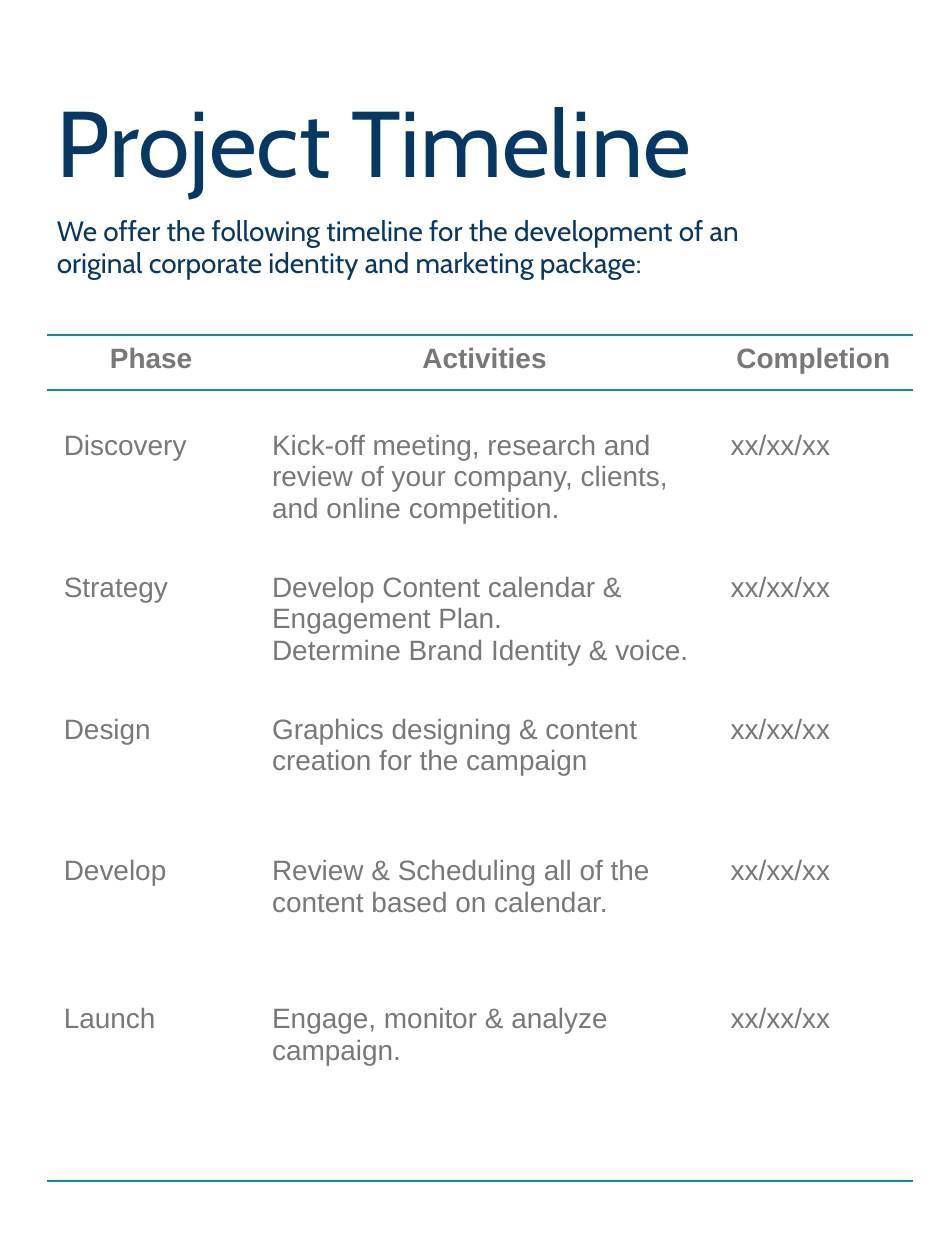
from lxml import etree
from pptx import Presentation
from pptx.dml.color import RGBColor
from pptx.enum.text import MSO_ANCHOR, MSO_AUTO_SIZE, PP_ALIGN
from pptx.oxml.ns import qn
from pptx.util import Pt

LEFT, CENTER = PP_ALIGN.LEFT, PP_ALIGN.CENTER
TOP = MSO_ANCHOR.TOP
NO_AUTOFIT = MSO_AUTO_SIZE.NONE
TITLE_ONLY_LAYOUT = 5
PLAIN_TABLE_STYLE = "{2D5ABB26-0587-4C30-8999-92F81FD0307C}"

# Content
TITLE = "Project Timeline"
INTRODUCTION = ("We offer the following timeline for the development of an "
                "original corporate identity and marketing package:")
HEADERS = ("Phase", "Activities", "Completion")
PHASES = [
    ("Discovery", "Kick-off meeting, research and review of your company, "
                  "clients, and online competition.", "xx/xx/xx"),
    ("Strategy", "Develop Content calendar & Engagement Plan.\n"
                 "Determine Brand Identity & voice.", "xx/xx/xx"),
    ("Design", "Graphics designing & content creation for the campaign", "xx/xx/xx"),
    ("Develop", "Review & Scheduling all of the content based on calendar.", "xx/xx/xx"),
    ("Launch", "Engage, monitor & analyze campaign.", "xx/xx/xx"),
]

THEME = {
    "heading_font": "Cabin", "body_font": "Arial",
    "navy": "073763", "gray": "787878", "teal": "0B9193",
    "title_size": 40, "text_size": 12, "rule_width": 1,
}

# Layout, in points
SLIDE_WIDTH, SLIDE_HEIGHT = 405, 540
MARGIN_LEFT = 20.16
TITLE_BOX = (MARGIN_LEFT, 33.84, 357.84, 76.32)
INTRODUCTION_BOX = (MARGIN_LEFT, 90, 339.12, 42.48)
TABLE_TOP = 143.6
COLUMN_WIDTHS = (89.28, 196.56, 85.3)
ROW_HEIGHTS = (23.5, 60.9, 60.9, 72.7, 63.36, 81.2)
TOP_INSETS = (3.3, 17.2, 17.2, 17.2, 5.1, 5.1)
CELL_INSET = 7.2
INTRODUCTION_SPACING = 0.97


def format_text(text_frame, font, size, color, bold=False, align=LEFT, spacing=1.0):
    for paragraph in text_frame.paragraphs:
        paragraph.alignment = align
        paragraph.line_spacing = spacing
        for run in paragraph.runs:
            run.font.name = THEME[font]
            run.font.size = Pt(THEME[size])
            run.font.bold = bold
            run.font.color.rgb = RGBColor.from_string(THEME[color])


def fill_heading(shape, box, text, size, spacing=1.0):
    shape.left, shape.top, shape.width, shape.height = map(Pt, box)
    text_frame = shape.text_frame
    text_frame.text = text
    text_frame.word_wrap = True
    text_frame.auto_size = NO_AUTOFIT
    text_frame.vertical_anchor = TOP
    text_frame.margin_left = text_frame.margin_right = Pt(4.2)
    text_frame.margin_top = text_frame.margin_bottom = Pt(2.25)
    format_text(text_frame, "heading_font", size, "navy", spacing=spacing)


def add_rules(cell, edges):
    properties = cell._tc.get_or_add_tcPr()
    for position, edge in enumerate(edges):
        line = etree.Element(qn(f"a:ln{edge}"), w=str(Pt(THEME["rule_width"])))
        fill = etree.SubElement(line, qn("a:solidFill"))
        etree.SubElement(fill, qn("a:srgbClr"), val=THEME["teal"])
        properties.insert(position, line)


def add_timeline(slide):
    rows = [HEADERS, *PHASES]
    frame = slide.shapes.add_table(
        len(rows), len(HEADERS), Pt(MARGIN_LEFT), Pt(TABLE_TOP),
        Pt(sum(COLUMN_WIDTHS)), Pt(sum(ROW_HEIGHTS)))
    table = frame.table
    table.first_row = table.horz_banding = False
    for style in frame.element.iter(qn("a:tableStyleId")):
        style.text = PLAIN_TABLE_STYLE
    for column, width in zip(table.columns, COLUMN_WIDTHS):
        column.width = Pt(width)

    rules = {0: "TB", len(rows) - 1: "B"}
    for index, values in enumerate(rows):
        table.rows[index].height = Pt(ROW_HEIGHTS[index])
        is_header = index == 0
        for cell, value in zip(table.rows[index].cells, values):
            cell.text_frame.text = value
            cell.vertical_anchor = TOP
            cell.margin_left = cell.margin_right = Pt(CELL_INSET)
            cell.margin_top, cell.margin_bottom = Pt(TOP_INSETS[index]), Pt(0)
            cell.fill.background()
            add_rules(cell, rules.get(index, ""))
            format_text(cell.text_frame, "body_font", "text_size", "gray",
                        is_header, CENTER if is_header else LEFT)


def main():
    presentation = Presentation()
    presentation.slide_width, presentation.slide_height = Pt(SLIDE_WIDTH), Pt(SLIDE_HEIGHT)
    slide = presentation.slides.add_slide(presentation.slide_layouts[TITLE_ONLY_LAYOUT])

    # Heading and introduction
    fill_heading(slide.shapes.title, TITLE_BOX, TITLE, "title_size")
    introduction = slide.shapes.add_textbox(*map(Pt, INTRODUCTION_BOX))
    fill_heading(introduction, INTRODUCTION_BOX, INTRODUCTION, "text_size",
                 INTRODUCTION_SPACING)

    # Timeline table
    add_timeline(slide)
    presentation.save("out.pptx")


if __name__ == "__main__":
    main()
